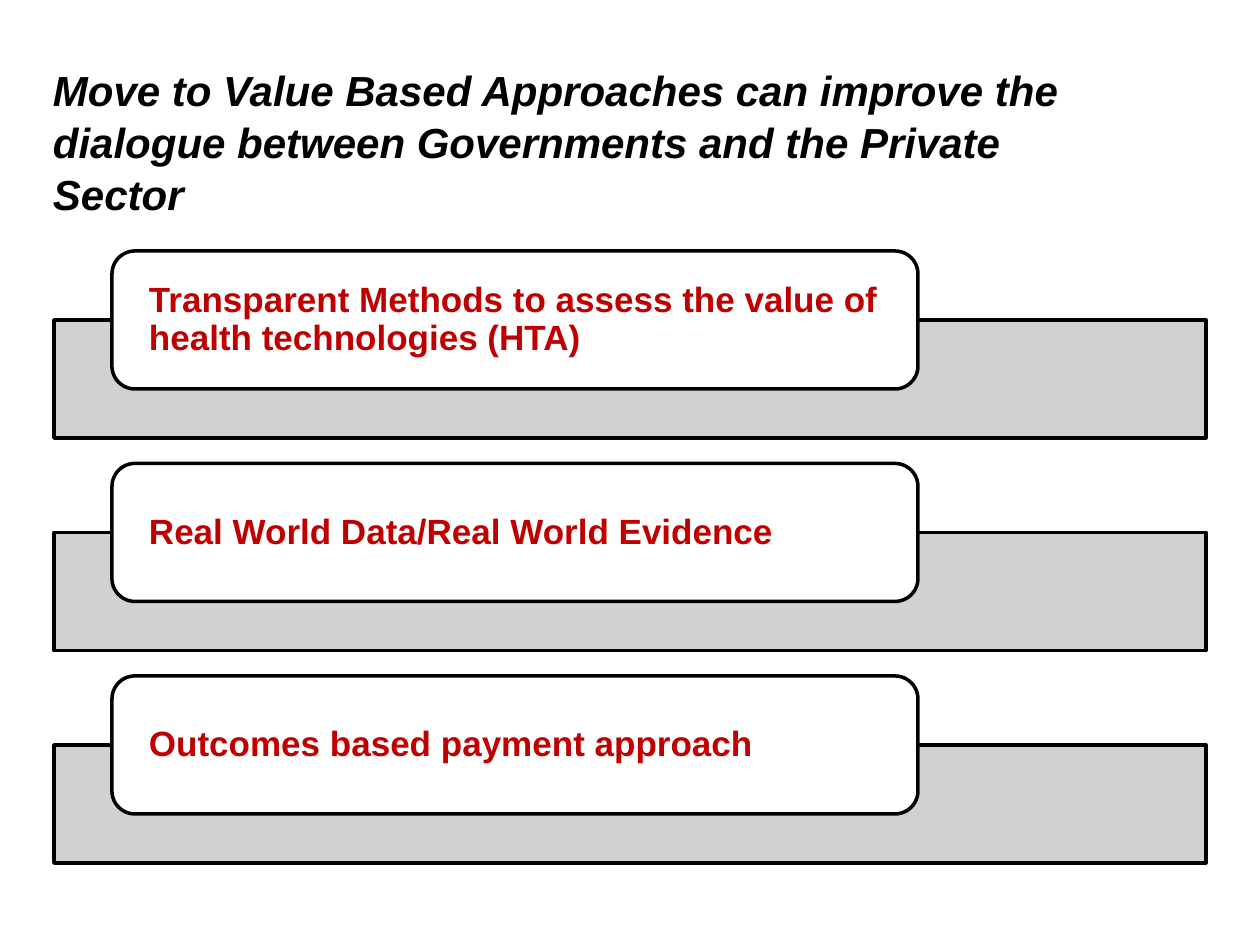
from lxml.etree import SubElement
from pptx import Presentation
from pptx.dml.color import RGBColor
from pptx.enum.shapes import MSO_SHAPE as SHAPE
from pptx.enum.text import MSO_ANCHOR as ANCHOR
from pptx.oxml.ns import qn
from pptx.util import Pt

# Content
TITLE = ("Move to Value Based Approaches can improve the dialogue "
         "between Governments and the Private Sector")
APPROACHES = [
    "Transparent Methods to assess the value of health technologies (HTA)",
    "Real World Data/Real World Evidence",
    "Outcomes based payment approach",
]

# Style
BLACK = RGBColor(0x00, 0x00, 0x00)
WHITE = RGBColor(0xFF, 0xFF, 0xFF)
GREY = RGBColor(0xCC, 0xCC, 0xCC)
RED = RGBColor(0xC0, 0x00, 0x00)
FONT = "Arial"

# Layout in px, 126 to the inch
PX = 914400 // 126
TITLE_BOX = (53, 62, 1016, 132)
BAR = (54, 320, 1152, 118)
CARD = (112, 251, 806, 138)
LABEL = (119, 258, 793, 125)
LABEL_INSET = 30
ROW_PITCH = 212.5


def emu(box, dy=0):
    x, y, w, h = box
    return [round(v * PX) for v in (x, y + dy, w, h)]


def add_box(shapes, kind, box, dy, color):
    sp = shapes.add_shape(kind, *emu(box, dy))
    sp.shadow.inherit = False
    sp.fill.solid()
    sp.fill.fore_color.rgb = color
    sp.line.color.rgb = BLACK
    sp.line.width = Pt(2)
    return sp


def add_text(shapes, box, dy, text, size, color, spacing, inset=0, italic=None):
    tf = shapes.add_textbox(*emu(box, dy)).text_frame
    tf.word_wrap = True
    tf.margin_left = tf.margin_right = inset * PX
    tf.margin_top = tf.margin_bottom = 0
    p = tf.paragraphs[0]
    p.line_spacing = spacing
    r = p.add_run()
    r.text = text
    r.font.name = FONT
    r.font.size = Pt(size)
    r.font.bold = True
    r.font.italic = italic
    r.font.color.rgb = color
    return tf


prs = Presentation()
prs.slide_width, prs.slide_height = 1260 * PX, 945 * PX
slide = prs.slides.add_slide(prs.slide_layouts[6])

# Title
add_text(slide.shapes, TITLE_BOX, 0, TITLE, 24, BLACK, 1.04, italic=True)

# One bar, card and label per approach
rows = slide.shapes.add_group_shape().shapes
for i, approach in enumerate(APPROACHES):
    dy = i * ROW_PITCH
    bar = add_box(rows, SHAPE.RECTANGLE, BAR, dy, GREY)
    clr = bar.fill._xPr.find(qn("a:solidFill"))[0]
    SubElement(clr, qn("a:alpha"), val="90000")
    add_box(rows, SHAPE.ROUNDED_RECTANGLE, CARD, dy, WHITE)
    tf = add_text(rows, LABEL, dy, approach, 20, RED, 0.9, LABEL_INSET)
    tf.vertical_anchor = ANCHOR.MIDDLE

prs.save("out.pptx")
